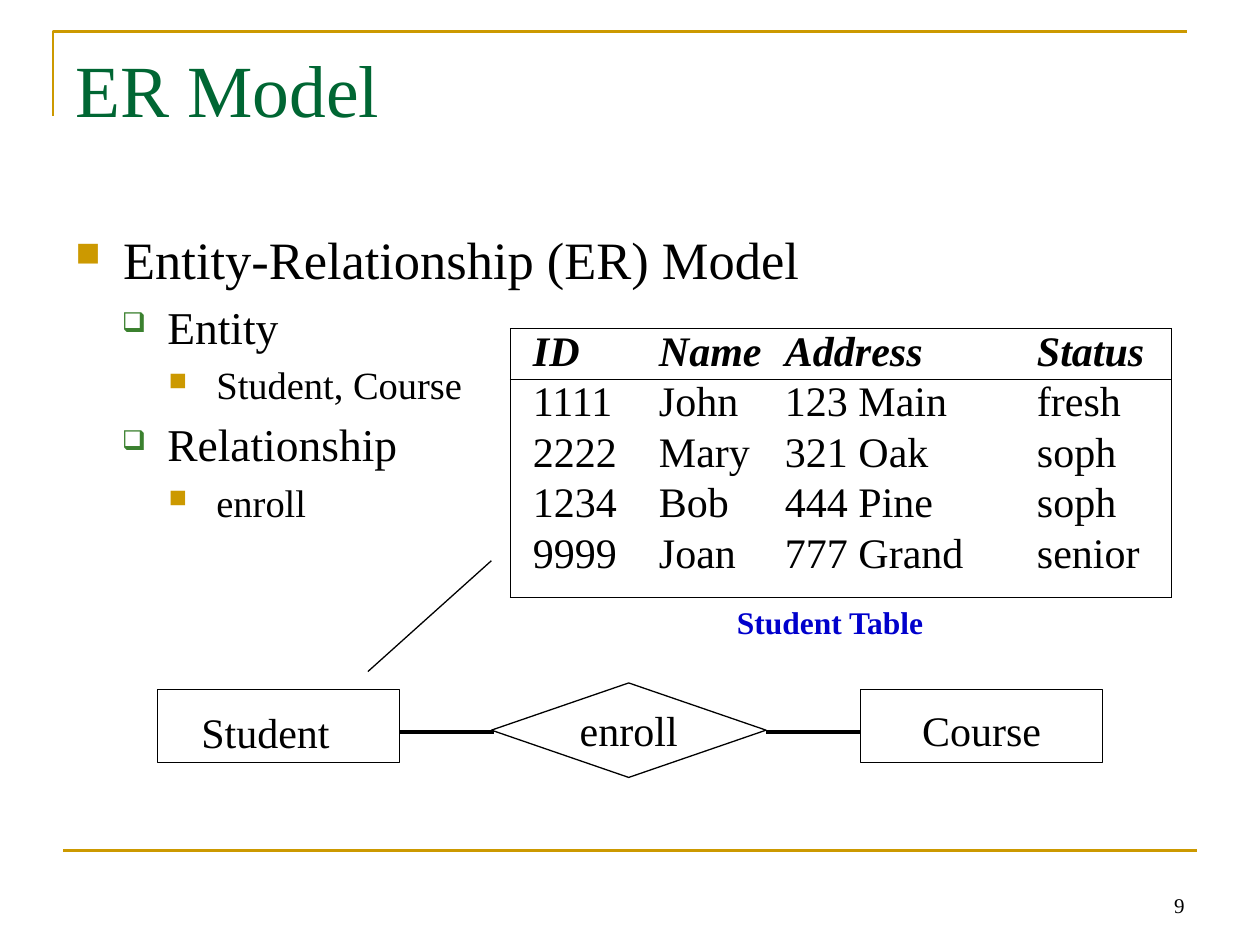
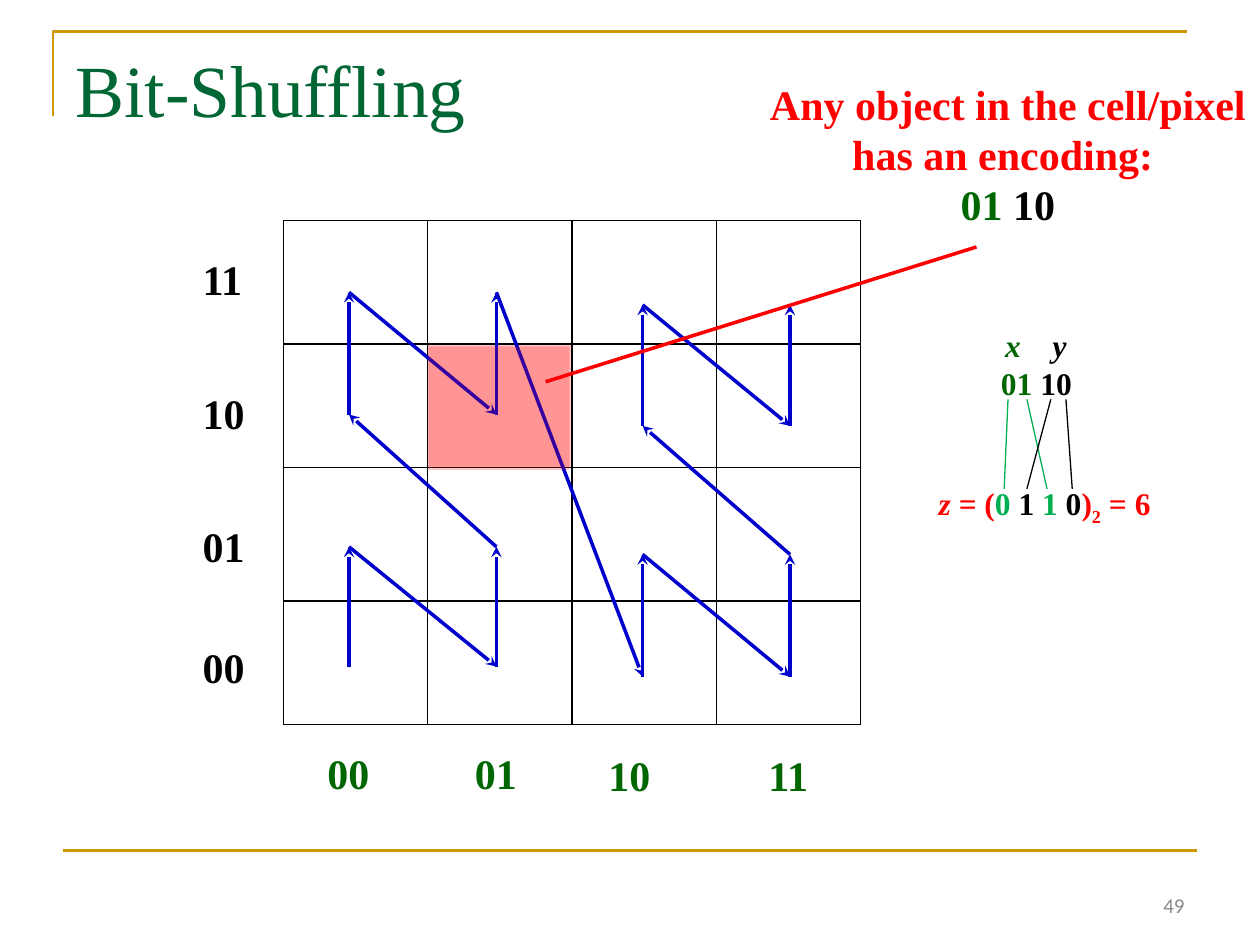
from dataclasses import dataclass
from itertools import pairwise, product

from lxml import etree
from pptx import Presentation
from pptx.dml.color import RGBColor
from pptx.enum.shapes import MSO_CONNECTOR, MSO_SHAPE
from pptx.enum.text import MSO_ANCHOR, MSO_AUTO_SIZE, PP_ALIGN
from pptx.oxml.ns import qn
from pptx.util import Emu, Pt

STRAIGHT = MSO_CONNECTOR.STRAIGHT
RECTANGLE, DIAMOND = MSO_SHAPE.RECTANGLE, MSO_SHAPE.DIAMOND
LEFT, CENTER, RIGHT = PP_ALIGN.LEFT, PP_ALIGN.CENTER, PP_ALIGN.RIGHT
TOP, MIDDLE, BOTTOM = MSO_ANCHOR.TOP, MSO_ANCHOR.MIDDLE, MSO_ANCHOR.BOTTOM
FIT_TEXT = MSO_AUTO_SIZE.SHAPE_TO_FIT_TEXT
EMU_PER_PX = 9144


@dataclass(frozen=True)
class Theme:
    serif: str = "Times New Roman"
    sans: str = "Calibri"
    black: str = "000000"
    gold: str = "CC9900"
    title_green: str = "006633"
    bullet_green: str = "3B812F"
    x_green: str = "006600"
    bit_green: str = "00B050"
    blue: str = "0000CC"
    red: str = "FF0000"
    pink: str = "FFBDBD"
    grey: str = "898989"
    title_size: int = 42
    outline_sizes: tuple = (30, 26, 22)
    label_size: int = 24
    caption_size: int = 18
    number_size: int = 12


THEME = Theme()
BULLETS = (
    (38, -38, "■", THEME.gold, 65),
    (73, -36, "❑", THEME.bullet_green, 60),
    (112, -38, "■", THEME.gold, 65),
)


def px(length):
    return Emu(length * EMU_PER_PX)


def px_all(lengths):
    return [px(length) for length in lengths]


def rgb(color):
    return RGBColor.from_string(color)


def add_xml(parent, tag, **attributes):
    child = etree.SubElement(parent, qn(tag))
    for key, value in attributes.items():
        child.set(key, str(value))
    return child


def format_run(run, size, color=THEME.black, bold=False, italic=False, font=THEME.serif):
    run.font.name = font
    run.font.size = Pt(size)
    run.font.color.rgb = rgb(color)
    run.font.bold = bold
    run.font.italic = italic


def add_label(slide, box, text, size=THEME.label_size, align=LEFT, anchor=TOP,
              wrap=False, fit=True, **style):
    label = slide.shapes.add_textbox(*px_all(box))
    frame = label.text_frame
    frame.text = text
    frame.word_wrap = wrap
    frame.vertical_anchor = anchor
    if fit:
        frame.auto_size = FIT_TEXT
    paragraph = frame.paragraphs[0]
    paragraph.alignment = align
    for run in paragraph.runs:
        format_run(run, size, **style)
    return frame


def add_pieces(paragraph, pieces, size):
    for text, color in pieces:
        run = paragraph.add_run()
        run.text = text
        format_run(run, size, color, bold=True)


def add_line(slide, start, end, color=THEME.black, width=0.75, arrow=False):
    line = slide.shapes.add_connector(STRAIGHT, *px_all(start + end))
    line.line.color.rgb = rgb(color)
    line.line.width = Pt(width)
    properties = line.element.spPr
    if arrow:
        add_xml(properties.find(qn("a:ln")), "a:tailEnd", type="stealth")
    add_xml(properties, "a:effectLst")


def add_outline_shape(slide, kind, box, text=""):
    node = slide.shapes.add_shape(kind, *px_all(box))
    node.shadow.inherit = False
    node.fill.background()
    node.line.color.rgb = rgb(THEME.black)
    node.line.width = Pt(0.75)
    frame = node.text_frame
    frame.text = text
    frame.word_wrap = False
    frame.vertical_anchor = MIDDLE
    frame.paragraphs[0].alignment = CENTER
    for run in frame.paragraphs[0].runs:
        format_run(run, THEME.label_size)


def add_highlight(slide, box, color, opacity):
    highlight = slide.shapes.add_shape(RECTANGLE, *px_all(box))
    highlight.shadow.inherit = False
    highlight.line.fill.background()
    highlight.fill.solid()
    highlight.fill.fore_color.rgb = rgb(color)
    tint = highlight.element.spPr.find(qn("a:solidFill"))[0]
    add_xml(tint, "a:alpha", val=opacity * 1000)


def add_grid(slide, left, top, columns, rows):
    frame = slide.shapes.add_table(
        len(rows), len(columns), *px_all((left, top, sum(columns), sum(rows))))
    grid = frame.table
    grid.first_row = grid.horz_banding = False
    for column, width in zip(grid.columns, columns):
        column.width = px(width)
    for row, height in zip(grid.rows, rows):
        row.height = px(height)
    return grid


def style_cell(cell, borders, width, fill=None):
    properties = cell._tc.get_or_add_tcPr()
    for side in "LRTB":
        edge = add_xml(properties, f"a:ln{side}", w=Pt(width))
        if side in borders:
            add_xml(add_xml(edge, "a:solidFill"), "a:srgbClr", val=THEME.black)
        else:
            add_xml(edge, "a:noFill")
    if fill:
        cell.fill.solid()
        cell.fill.fore_color.rgb = rgb(fill)
    else:
        cell.fill.background()


def add_outline(slide, box, items):
    outline = slide.shapes.add_textbox(*px_all(box))
    frame = outline.text_frame
    frame.word_wrap = True
    for index, (level, text) in enumerate(items):
        paragraph = frame.add_paragraph() if index else frame.paragraphs[0]
        paragraph.text = text
        paragraph.level = level
        size = THEME.outline_sizes[level]
        paragraph.space_before = Pt(size * 0.2)
        format_run(paragraph.runs[0], size)
        margin, indent, symbol, color, percent = BULLETS[level]
        properties = paragraph._p.get_or_add_pPr()
        properties.set("marL", str(px(margin)))
        properties.set("indent", str(px(indent)))
        add_xml(add_xml(properties, "a:buClr"), "a:srgbClr", val=color)
        add_xml(properties, "a:buSzPct", val=percent * 1000)
        add_xml(properties, "a:buChar", char=symbol)


def start_slide(deck, title, number, **number_style):
    slide = deck.slides.add_slide(deck.slide_layouts[6])
    builder = slide.shapes.build_freeform(42, 92, scale=EMU_PER_PX)
    builder.add_line_segments([(42, 25), (942, 25)], close=False)
    bracket = builder.convert_to_shape()
    bracket.shadow.inherit = False
    bracket.fill.background()
    bracket.line.color.rgb = rgb(THEME.gold)
    bracket.line.width = Pt(1.5)
    add_line(slide, (50, 675), (950, 675), THEME.gold, 1.5)
    add_label(slide, (50, 30, 900, 125), title, THEME.title_size, wrap=True, fit=False,
              color=THEME.title_green)
    add_label(slide, (717, 683, 233, 50), number, THEME.number_size, RIGHT, BOTTOM,
              wrap=True, fit=False, **number_style)
    return slide


def add_student_table(slide):
    records = (
        ("ID", "Name", "Address", "Status"),
        ("1111", "John", "123 Main", "fresh"),
        ("2222", "Mary", "321 Oak", "soph"),
        ("1234", "Bob", "444 Pine", "soph"),
        ("9999", "Joan", "777 Grand", "senior"),
    )
    students = add_grid(slide, 405, 261, (118, 100, 200, 107), (40, 40, 40, 40, 53))
    last_row, last_column = len(records) - 1, len(records[0]) - 1
    for row, record in enumerate(records):
        for column, value in enumerate(record):
            cell = students.cell(row, column)
            cell.text = value
            cell.margin_left = px(0 if column else 18)
            cell.margin_right = cell.margin_top = cell.margin_bottom = 0
            format_run(cell.text_frame.paragraphs[0].runs[0], THEME.label_size,
                       bold=row == 0, italic=row == 0)
            borders = "T" * (row <= 1) + "B" * (row in (0, last_row))
            borders += "L" * (column == 0) + "R" * (column == last_column)
            style_cell(cell, borders, 0.75)


def build_er_model(deck):
    slide = start_slide(deck, "ER Model", "9")
    add_outline(slide, (50, 175, 900, 495), (
        (0, "Entity-Relationship (ER) Model"),
        (1, "Entity"),
        (2, "Student, Course"),
        (1, "Relationship"),
        (2, "enroll"),
    ))
    for left in (125, 683):
        add_outline_shape(slide, RECTANGLE, (left, 547, 192, 58))
    add_outline_shape(slide, DIAMOND, (390, 542, 218, 75), "enroll")
    for start, end in ((317, 392), (608, 683)):
        add_line(slide, (start, 581), (end, 581), width=2.25)
    add_label(slide, (150, 556, 123, 50), "Student")
    add_label(slide, (722, 554, 116, 50), "Course")
    add_line(slide, (292, 533), (390, 445))
    add_student_table(slide)
    add_label(slide, (575, 474, 170, 40), "Student Table", THEME.caption_size,
              color=THEME.blue, bold=True)


def add_z_curve(slide):
    column_pairs = ((277, 394), (510, 627))
    row_pairs = (((529, 434), (329, 232)), ((537, 440), (338, 242)))
    stops = [
        (column_pairs[side][column], row_pairs[side][half][step])
        for side, half, column, step in product((0, 1), repeat=4)
    ]
    for start, end in pairwise(stops):
        add_line(slide, start, end, THEME.blue, 2, arrow=True)


def add_encoding(slide):
    note = add_label(slide, (600, 57, 400, 131),
                     "Any object in the cell/pixel has an encoding: ",
                     align=CENTER, wrap=True, color=THEME.red, bold=True)
    code = note.add_paragraph()
    code.alignment = CENTER
    bits = (("01 ", THEME.x_green), ("10", THEME.black))
    add_pieces(code, bits, THEME.label_size)

    z_value = add_label(slide, (735, 379, 198, 40), "z = ", THEME.caption_size,
                        wrap=True, color=THEME.red, bold=True, italic=True).paragraphs[0]
    add_pieces(z_value, (
        ("(", THEME.red), ("0 ", THEME.bit_green), ("1 ", THEME.black),
        ("1 ", THEME.bit_green), ("0", THEME.black), (")", THEME.red),
        ("2", THEME.red), (" = 6", THEME.red),
    ), THEME.caption_size)
    subscript = z_value.runs[-2]
    subscript.font._element.set("baseline", "-25000")

    for axis, left, color in (("x", 786, THEME.x_green), ("y", 823, THEME.black)):
        add_label(slide, (left, 254, 36, 40), axis, THEME.caption_size, CENTER,
                  color=color, bold=True, italic=True)
    shuffled = add_label(slide, (784, 284, 77, 40), "", align=CENTER).paragraphs[0]
    add_pieces(shuffled, bits, THEME.caption_size)
    for top_x, bottom_x, color in (
        (800, 797, THEME.bit_green), (815, 831, THEME.bit_green),
        (834, 815, THEME.black), (846, 851, THEME.black),
    ):
        add_line(slide, (top_x, 317), (bottom_x, 388), color)


def build_bit_shuffling(deck):
    slide = start_slide(deck, "Bit-Shuffling", "49", color=THEME.grey, font=THEME.sans)
    cells = add_grid(slide, 225, 175, (114.5,) * 4, (98, 98, 106, 98))
    for row, column in product(range(4), repeat=2):
        fill = THEME.pink if (row, column) == (1, 1) else None
        style_cell(cells.cell(row, column), "LRTB", 1, fill)
    for text, left, top in (("00", 250, 588), ("01", 367, 588),
                            ("10", 473, 590), ("11", 600, 590)):
        add_label(slide, (left, top, 54, 50), text, color=THEME.x_green, bold=True)
    for text, top in (("00", 504), ("01", 408), ("10", 303), ("11", 196)):
        add_label(slide, (151, top, 54, 50), text, bold=True)
    add_z_curve(slide)
    add_line(slide, (433, 303), (775, 196), THEME.red, 2)
    add_highlight(slide, (340, 275, 112, 98), THEME.red, 21)
    add_encoding(slide)


def main():
    deck = Presentation()
    deck.slide_width, deck.slide_height = px(1000), px(750)
    build_er_model(deck)
    build_bit_shuffling(deck)
    deck.save("out.pptx")


if __name__ == "__main__":
    main()
